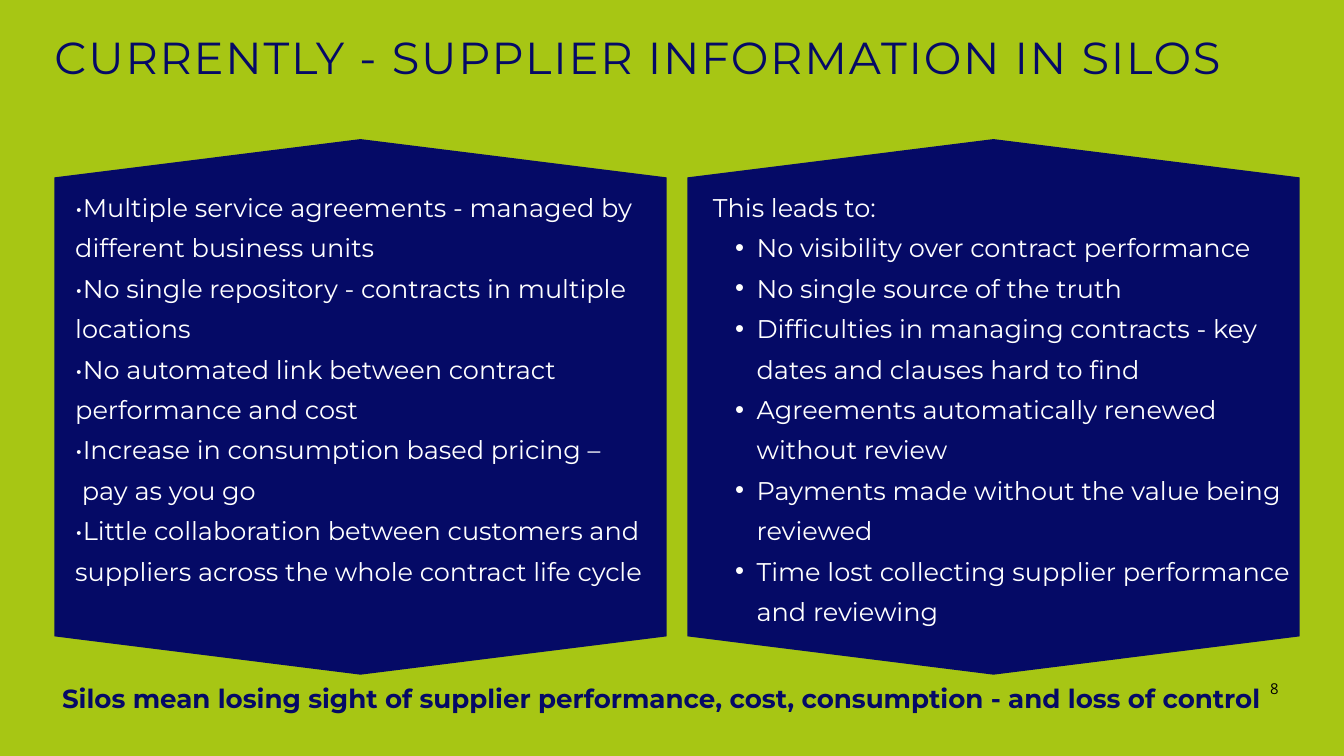
from lxml import etree
from pptx import Presentation
from pptx.dml.color import RGBColor
from pptx.enum.text import MSO_ANCHOR, MSO_AUTO_SIZE, PP_ALIGN
from pptx.oxml.ns import qn
from pptx.util import Inches, Pt

LIME = RGBColor(0xA7, 0xC6, 0x14)
NAVY = RGBColor(0x05, 0x0A, 0x66)
WHITE = RGBColor(0xFF, 0xFF, 0xFF)
BLACK = RGBColor(0, 0, 0)
LEFT, CENTER = PP_ALIGN.LEFT, PP_ALIGN.CENTER
TOP = MSO_ANCHOR.TOP
NO_AUTOFIT = MSO_AUTO_SIZE.NONE
TITLE_ONLY = 5

PANEL_TOP, PANEL_WIDTH, PANEL_HEIGHT, PEAK = 2.07, 9.11, 7.97, 0.57
PANEL_LEFTS = (0.81, 10.23)

CAUSES = [
    "•Multiple service agreements - managed by different business units",
    "•No single repository - contracts in multiple locations",
    "•No automated link between contract performance and cost",
    "•Increase in consumption based pricing –",
    "pay as you go",
    "•Little collaboration between customers and suppliers across the whole contract life cycle",
]
EFFECTS = [
    "No visibility over contract performance",
    "No single source of the truth",
    "Difficulties in managing contracts - key dates and clauses hard to find",
    "Agreements automatically renewed without review",
    "Payments made without the value being reviewed",
    "Time lost collecting supplier performance and reviewing",
]


class SlideBuilder:
    font = "Montserrat"
    body_size = 27.4
    body_spacing = 43.3

    def __init__(self, slide):
        self.slide = slide
        fill = slide.background.fill
        fill.solid()
        fill.fore_color.rgb = LIME

    def prepare_frame(self, shape, wrap=True):
        frame = shape.text_frame
        frame.margin_left = frame.margin_right = 0
        frame.margin_top = frame.margin_bottom = 0
        frame.vertical_anchor = TOP
        frame.auto_size = NO_AUTOFIT
        frame.word_wrap = wrap
        return frame

    def text_box(self, left, top, width, height, wrap=True):
        shape = self.slide.shapes.add_textbox(
            Inches(left), Inches(top), Inches(width), Inches(height))
        return self.prepare_frame(shape, wrap)

    def add_text(self, paragraph, text, size, spacing, color,
                 font=None, bold=False, align=LEFT):
        paragraph.alignment = align
        paragraph.line_spacing = Pt(spacing)
        paragraph.space_before = Pt(0)
        run = paragraph.add_run()
        run.text = text
        run.font.name = font or self.font
        run.font.size = Pt(size)
        run.font.bold = bold
        run.font.color.rgb = color
        return run

    def indent(self, paragraph, margin, first_line=0):
        properties = paragraph._p.get_or_add_pPr()
        properties.set("marL", str(Inches(margin)))
        properties.set("indent", str(Inches(first_line)))
        return properties

    def title(self, text, left, top, width, height):
        shape = self.slide.shapes.title
        shape.left, shape.top = Inches(left), Inches(top)
        shape.width, shape.height = Inches(width), Inches(height)
        paragraph = self.prepare_frame(shape).paragraphs[0]
        run = self.add_text(paragraph, text, 48, 67.2, NAVY)
        run._r.get_or_add_rPr().set("spc", "190")

    def panel(self, left):
        """Draw a box whose top and bottom edges rise to a central peak."""
        middle, right = left + PANEL_WIDTH / 2, left + PANEL_WIDTH
        bottom = PANEL_TOP + PANEL_HEIGHT
        shoulder, foot = PANEL_TOP + PEAK, bottom - PEAK
        points = [(middle, PANEL_TOP), (right, shoulder), (right, foot),
                  (middle, bottom), (left, foot)]
        outline = self.slide.shapes.build_freeform(Inches(left), Inches(shoulder))
        outline.add_line_segments([(Inches(x), Inches(y)) for x, y in points])
        shape = outline.convert_to_shape()
        shape.shadow.inherit = False
        shape.fill.solid()
        shape.fill.fore_color.rgb = NAVY
        shape.line.fill.background()

    def body_lines(self, frame, lines):
        for number, text in enumerate(lines):
            paragraph = frame.add_paragraph() if number else frame.paragraphs[0]
            self.add_text(paragraph, text, self.body_size, self.body_spacing, WHITE)

    def bullet(self, paragraph):
        paragraph.level = 1
        properties = self.indent(paragraph, 0.65, -0.32)
        font = etree.SubElement(properties, qn("a:buFont"))
        font.set("typeface", "Arial")
        etree.SubElement(properties, qn("a:buChar")).set("char", "•")


def main():
    presentation = Presentation()
    presentation.slide_width = Inches(20)
    presentation.slide_height = Inches(11.25)
    layout = presentation.slide_layouts[TITLE_ONLY]
    builder = SlideBuilder(presentation.slides.add_slide(layout))

    builder.title("CURRENTLY - SUPPLIER INFORMATION IN SILOS",
                  0.81, 0.31, 18.22, 0.89)
    for left in PANEL_LEFTS:
        builder.panel(left)

    causes = builder.text_box(1.12, 2.71, 8.47, 5.91)
    builder.body_lines(causes, CAUSES)
    builder.indent(causes.paragraphs[CAUSES.index("pay as you go")], 0.1)

    effects = builder.text_box(10.61, 2.71, 8.73, 6.5)
    builder.body_lines(effects, ["This leads to:"] + EFFECTS)
    for paragraph in effects.paragraphs[1:]:
        builder.bullet(paragraph)

    conclusion = builder.text_box(0.81, 10.01, 18.06, 0.57)
    builder.add_text(
        conclusion.paragraphs[0],
        "Silos mean losing sight of supplier performance, cost, consumption"
        " - and loss of control",
        28, 44.3, NAVY, bold=True, align=CENTER)

    page_number = builder.text_box(18.88, 10.07, 0.17, 0.22, wrap=False)
    builder.add_text(page_number.paragraphs[0], "8", 16, 22.4, BLACK,
                     font="Open Sans", align=CENTER)

    presentation.save("out.pptx")


if __name__ == "__main__":
    main()
